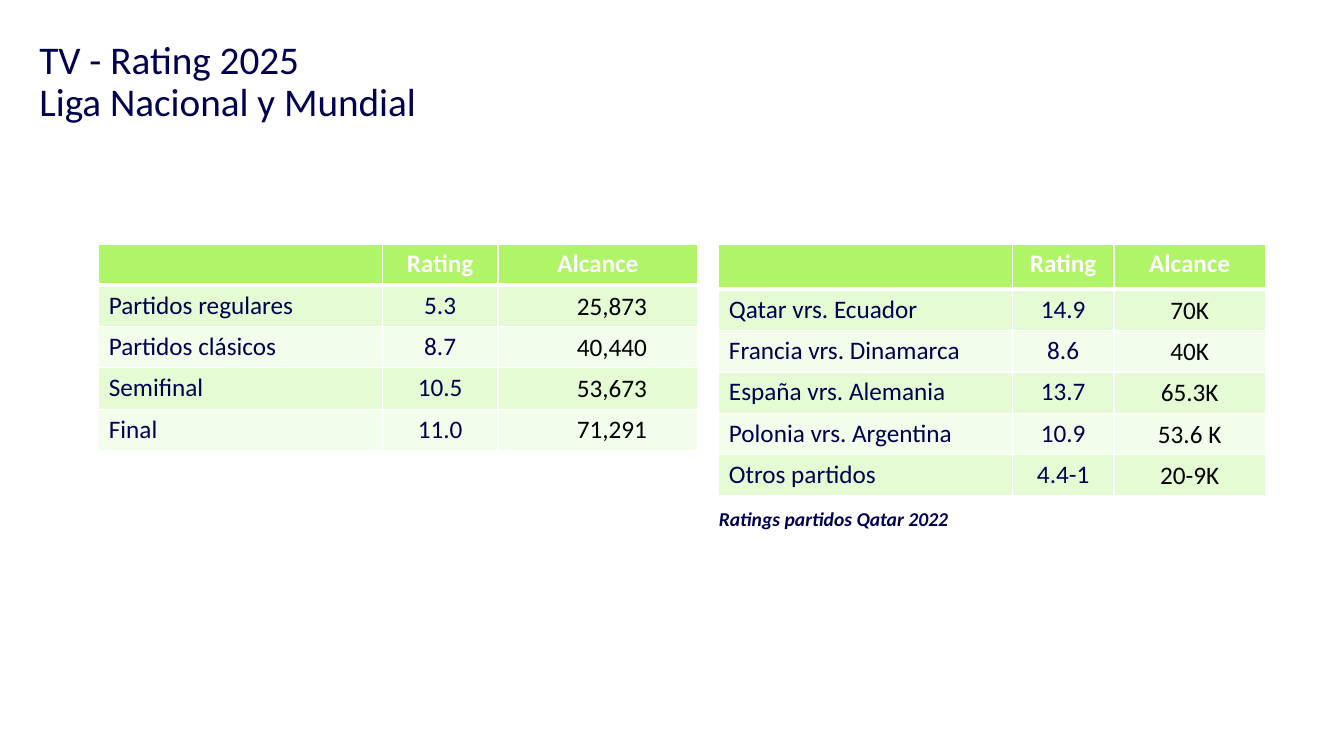
from lxml import etree
from pptx import Presentation
from pptx.dml.color import RGBColor
from pptx.enum import text
from pptx.oxml import ns
from pptx.util import Inches, Pt

NAVY = RGBColor(0x00, 0x00, 0x50)
BLACK = RGBColor(0x00, 0x00, 0x00)
WHITE = RGBColor(0xFF, 0xFF, 0xFF)
HEADER_GREEN = RGBColor(0xB0, 0xF4, 0x67)
BAND_GREENS = (RGBColor(0xE4, 0xFB, 0xD3), RGBColor(0xF2, 0xFD, 0xEB))
FONT = "Calibri"
LEFT, CENTER = text.PP_ALIGN.LEFT, text.PP_ALIGN.CENTER
HEADINGS = ("", "Rating", "Alcance")
ROW_HEIGHT = 0.41

LEAGUE_ROWS = (
    ("Partidos regulares", "5.3", "25,873"),
    ("Partidos clásicos", "8.7", "40,440"),
    ("Semifinal", "10.5", "53,673"),
    ("Final", "11.0", "71,291"),
)
WORLD_CUP_ROWS = (
    ("Qatar vrs. Ecuador", "14.9", "70K"),
    ("Francia vrs. Dinamarca", "8.6", "40K"),
    ("España vrs. Alemania", "13.7", "65.3K"),
    ("Polonia vrs. Argentina", "10.9", "53.6 K"),
    ("Otros partidos", "4.4-1", "20-9K"),
)


def write(frame, words, size=18, color=NAVY, bold=False, italic=False,
          align=LEFT, spacing=None, after=None):
    """Fill the first paragraph of a frame; a newline becomes a line break."""
    para = frame.paragraphs[0]
    para.text = words
    para.alignment = align
    if spacing:
        para.line_spacing = spacing
    if after is not None:
        para.space_after = Pt(after)
    for span in para.runs:
        span.font.name = FONT
        span.font.size = Pt(size)
        span.font.color.rgb = color
        span.font.bold = bold
        span.font.italic = italic


def set_insets(target, left=0, top=0, right=0, bottom=0):
    target.margin_left, target.margin_top = Inches(left), Inches(top)
    target.margin_right, target.margin_bottom = Inches(right), Inches(bottom)


def set_borders(cell, top=1, bottom=1):
    """Draw white borders, with widths in points; call before filling."""
    properties = cell._tc.get_or_add_tcPr()
    for side, width in (("L", 1), ("R", 1), ("T", top), ("B", bottom)):
        line = etree.SubElement(properties, ns.qn(f"a:ln{side}"), w=str(Pt(width)))
        fill = etree.SubElement(line, ns.qn("a:solidFill"))
        etree.SubElement(fill, ns.qn("a:srgbClr"), val=str(WHITE))


def paint(cell, color):
    cell.fill.solid()
    cell.fill.fore_color.rgb = color


def add_rating_table(page, left, widths, rows, header_height=ROW_HEIGHT, reach_indent=0.01):
    heights = [header_height] + [ROW_HEIGHT] * len(rows)
    table = page.shapes.add_table(
        len(heights), len(widths), Inches(left), Inches(2.42),
        Inches(sum(widths)), Inches(sum(heights))).table
    for column, width in zip(table.columns, widths):
        column.width = Inches(width)
    for row, height in zip(table.rows, heights):
        row.height = Inches(height)

    for cell, heading in zip(table.rows[0].cells, HEADINGS):
        set_borders(cell, bottom=3)
        paint(cell, HEADER_GREEN)
        write(cell.text_frame, heading, color=WHITE, bold=True, align=CENTER)

    for number, values in enumerate(rows, start=1):
        cells = list(table.rows[number].cells)
        for cell in cells:
            set_borders(cell, top=3 if number == 1 else 1)
            paint(cell, BAND_GREENS[(number - 1) % 2])
        match, rating, reach = cells
        write(match.text_frame, values[0])
        write(rating.text_frame, values[1], align=CENTER)
        write(reach.text_frame, values[2], color=BLACK, align=CENTER)
        reach.vertical_anchor = text.MSO_ANCHOR.MIDDLE
        set_insets(reach, left=reach_indent, top=0.01, right=0.01)


def add_title(page, words):
    title = page.shapes.title
    title.left, title.top = Inches(0.39), Inches(0.4)
    title.width, title.height = Inches(10.45), Inches(1.08)
    frame = title.text_frame
    frame.vertical_anchor = text.MSO_ANCHOR.TOP
    frame.auto_size = text.MSO_AUTO_SIZE.NONE
    set_insets(frame)
    write(frame, words, size=28, spacing=0.9)


def add_caption(page, words):
    box = page.shapes.add_textbox(Inches(7.13), Inches(5.01), Inches(2.73), Inches(0.24))
    frame = box.text_frame
    frame.word_wrap = False
    frame.auto_size = text.MSO_AUTO_SIZE.SHAPE_TO_FIT_TEXT
    set_insets(frame)
    write(frame, words, size=14, bold=True, italic=True, spacing=1.1, after=6)


def main():
    deck = Presentation()
    deck.slide_width, deck.slide_height = Inches(13.33), Inches(7.5)
    page = deck.slides.add_slide(deck.slide_layouts.get_by_name("Title Only"))
    add_title(page, "TV - Rating 2025\nLiga Nacional y Mundial")
    add_rating_table(page, 0.98, (2.81, 1.15, 1.98), LEAGUE_ROWS, reach_indent=0.29)
    add_rating_table(page, 7.13, (2.91, 1.01, 1.5), WORLD_CUP_ROWS, header_height=0.45)
    add_caption(page, "Ratings partidos Qatar 2022")
    deck.save("out.pptx")


if __name__ == "__main__":
    main()
